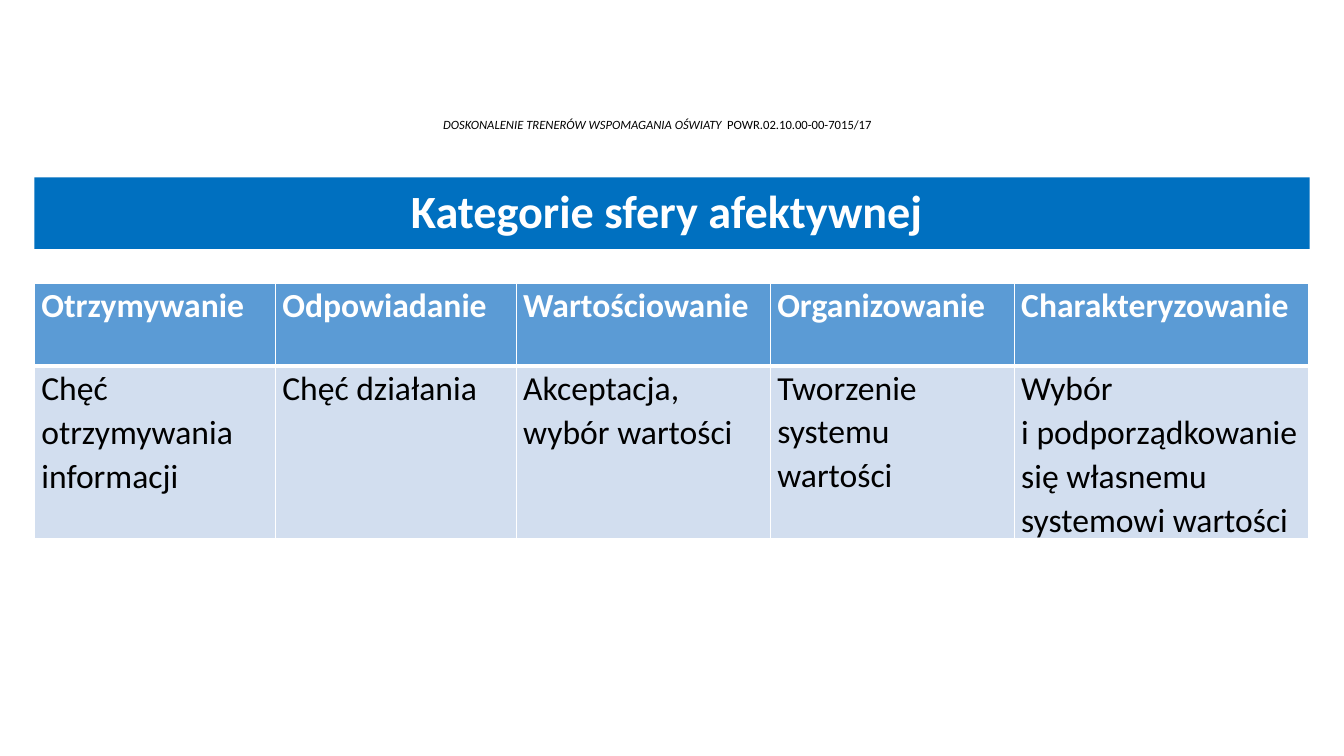
"""Build the slide on the categories of the affective domain."""
from dataclasses import dataclass, field

from lxml import etree
from pptx import Presentation
from pptx import util as u
from pptx.dml.color import RGBColor
from pptx.enum import shapes, text
from pptx.oxml.ns import qn

COLORS = {"white": "FFFFFF", "black": "000000", "title": "0070C0",
          "header": "5B9BD5", "body": "D2DEEF"}
LEFT, WIDTH = 0.34, 12.65
CENTER = text.PP_ALIGN.CENTER


@dataclass
class Category:
    name: str
    meaning: str
    width: float
    spacing: float = 1.07


@dataclass
class RowStyle:
    height: float
    fill: str
    color: str
    bold: bool
    borders: dict[str, float] = field(default_factory=dict)


CATEGORIES = [
    Category("Otrzymywanie", "Chęć otrzymywania informacji", 2.39),
    Category("Odpowiadanie", "Chęć działania", 2.39),
    Category("Wartościowanie", "Akceptacja, wybór wartości", 2.52),
    Category("Organizowanie", "Tworzenie systemu wartości", 2.42, 1.06),
    Category("Charakteryzowanie",
             "Wybór \vi podporządkowanie się własnemu systemowi wartości", 2.92),
]
HEADER = RowStyle(0.82, "header", "white", True,
                  {"lnL": 1, "lnR": 1, "lnT": 1, "lnB": 3})
BODY = RowStyle(1.67, "body", "black", False,
                {"lnL": 1, "lnR": 1, "lnT": 3, "lnB": 1})


def rgb(name: str) -> RGBColor:
    return RGBColor.from_string(COLORS[name])


def apply(target, formats: dict) -> None:
    for name, value in formats.items():
        setattr(target, name, value)


def style_font(font, size: float, color: str, **formats) -> None:
    apply(font, {"name": "Calibri", "size": u.Pt(size), **formats})
    font.color.rgb = rgb(color)


def add_project_line(page) -> None:
    box = page.shapes.add_textbox(u.Inches(0.79), u.Inches(0.46),
                                  u.Inches(11.46), u.Inches(1.22))
    apply(box.text_frame, {"word_wrap": True, "margin_bottom": u.Inches(0.37),
                           "vertical_anchor": text.MSO_ANCHOR.BOTTOM})
    para = box.text_frame.paragraphs[0]
    apply(para, {"alignment": CENTER, "line_spacing": 0.9})
    for words, italic in (("DOSKONALENIE TRENERÓW WSPOMAGANIA OŚWIATY  ", True),
                          ("POWR.02.10.00-00-7015/17", False)):
        span = para.add_run()
        span.text = words
        style_font(span.font, 9, "black", italic=italic)


def add_title(page) -> None:
    bar = page.shapes.add_shape(shapes.MSO_SHAPE.RECTANGLE, u.Inches(LEFT),
                                u.Inches(1.76), u.Inches(WIDTH), u.Inches(0.71))
    bar.shadow.inherit = False
    bar.fill.solid()
    bar.fill.fore_color.rgb = rgb("title")
    bar.line.fill.background()
    apply(bar.text_frame, {"word_wrap": True,
                           "vertical_anchor": text.MSO_ANCHOR.MIDDLE})
    para = bar.text_frame.paragraphs[0]
    apply(para, {"alignment": CENTER, "line_spacing": 0.9})
    span = para.add_run()
    span.text = "Kategorie sfery afektywnej "
    style_font(span.font, 33, "white", bold=True)


def set_borders(cell, borders: dict[str, float]) -> None:
    properties = cell._tc.get_or_add_tcPr()
    for index, (side, points) in enumerate(borders.items()):
        line = etree.Element(qn(f"a:{side}"), w=str(u.Pt(points)))
        fill = etree.SubElement(line, qn("a:solidFill"))
        etree.SubElement(fill, qn("a:srgbClr"), val=COLORS["white"])
        properties.insert(index, line)


def fill_cell(cell, words: str, spacing: float, style: RowStyle) -> None:
    apply(cell, {"margin_left": u.Inches(0.07), "margin_right": u.Inches(0.07),
                 "margin_top": 0, "margin_bottom": 0})
    cell.fill.solid()
    cell.fill.fore_color.rgb = rgb(style.fill)
    set_borders(cell, style.borders)
    cell.text = words
    para = cell.text_frame.paragraphs[0]
    para.line_spacing = spacing
    for span in para.runs:
        style_font(span.font, 24, style.color, bold=style.bold)


def add_categories(page) -> None:
    styles = (HEADER, BODY)
    table = page.shapes.add_table(
        len(styles), len(CATEGORIES), u.Inches(LEFT), u.Inches(2.81),
        u.Inches(WIDTH), u.Inches(sum(style.height for style in styles))).table
    for row, style in enumerate(styles):
        table.rows[row].height = u.Inches(style.height)
    for column, category in enumerate(CATEGORIES):
        table.columns[column].width = u.Inches(category.width)
        for row, words in enumerate((category.name, category.meaning)):
            fill_cell(table.cell(row, column), words, category.spacing, styles[row])


def main() -> None:
    deck = Presentation()
    apply(deck, {"slide_width": u.Inches(13.33), "slide_height": u.Inches(7.5)})
    page = deck.slides.add_slide(deck.slide_layouts[6])
    add_project_line(page)
    add_title(page)
    add_categories(page)
    deck.save("out.pptx")


if __name__ == "__main__":
    main()
